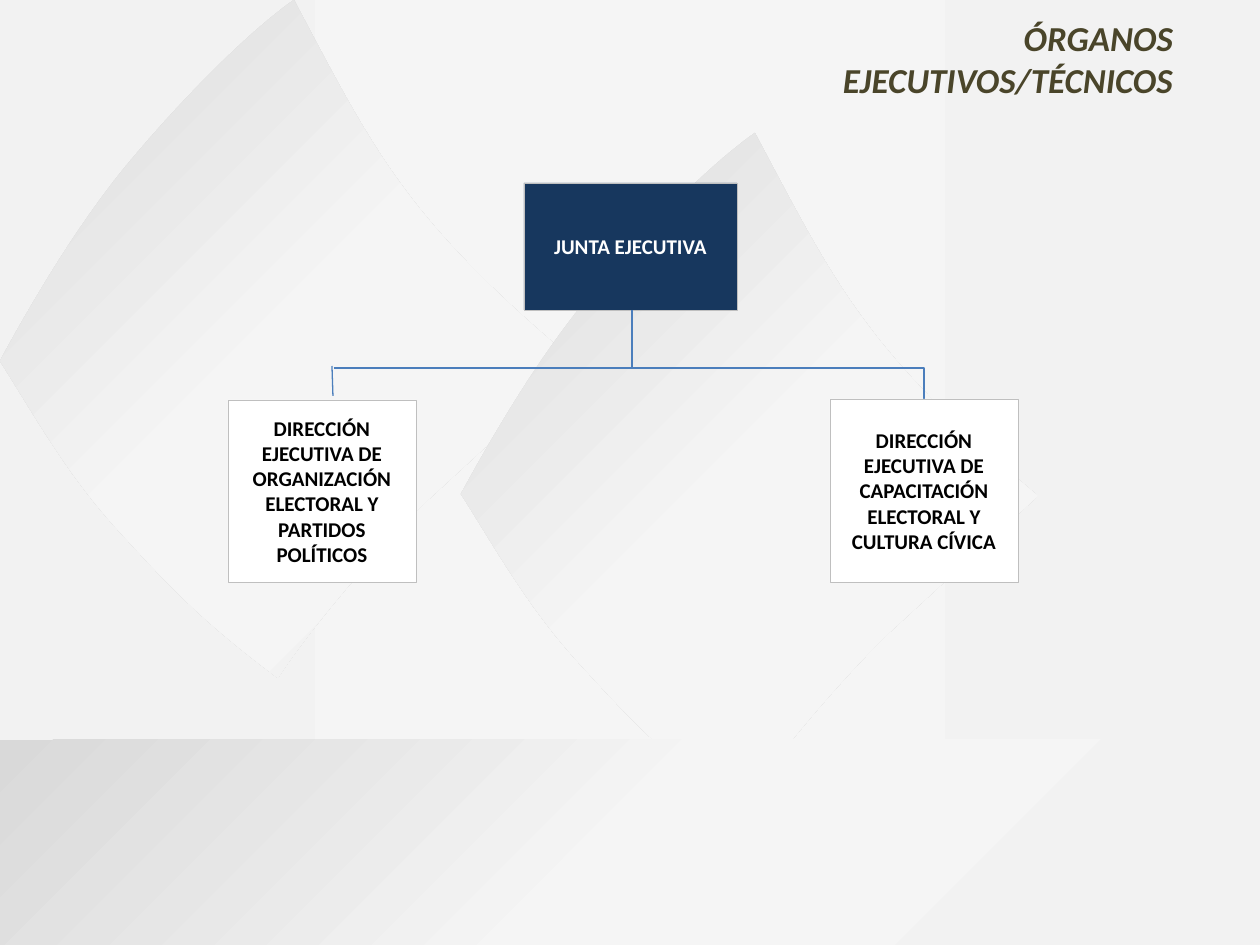
from lxml.etree import SubElement
from pptx import Presentation
from pptx.dml.color import RGBColor
from pptx.enum.shapes import MSO_CONNECTOR as Link, MSO_SHAPE as Preset
from pptx.enum.text import MSO_ANCHOR as Anchor, MSO_AUTO_SIZE as AutoSize, PP_ALIGN as Align
from pptx.oxml import parse_xml
from pptx.oxml.ns import nsdecls, qn
from pptx.util import Emu, Pt

PX_PER_INCH = 126
SLIDE_W, SLIDE_H = 1260, 945
FONT = "Calibri"
COLORS = {
    "shade": "D9D9D9", "mist": "F5F5F5", "edge": "F2F2F2",
    "navy": "17375E", "white": "FFFFFF", "black": "000000",
    "border": "BFBFBF", "link": "4B7EBC", "olive": "4A452A",
}
KITE_START = (0, 361)
KITE_CURVES = [
    [(30, 306), (73, 232), (122, 171)],
    [(171, 111), (244, 35), (294, 0)],
    [(340, 87), (369, 144), (416, 204)],
    [(464, 265), (527, 321), (577, 363)],
    [(528, 408), (478, 454), (428, 500)],
    [(379, 547), (305, 635), (278, 678)],
    [(202, 621), (170, 587), (118, 530)],
    [(67, 474), (38, 421), (0, 361)],
]


def px(length):
    return Emu(round(length * 914400 / PX_PER_INCH))


def color(name):
    return RGBColor.from_string(COLORS[name])


def set_gradient(shape, stops, angle):
    shape.shadow.inherit = False
    shape.line.fill.background()
    shape.fill.background()
    stop_xml = "".join(
        f'<a:gs pos="{i * 50000}"><a:srgbClr val="{COLORS[stop]}"/></a:gs>'
        for i, stop in enumerate(stops))
    gradient = parse_xml(
        f'<a:gradFill {nsdecls("a")} rotWithShape="1"><a:gsLst>{stop_xml}</a:gsLst>'
        f'<a:lin ang="{angle * 60000}" scaled="0"/></a:gradFill>')
    properties = shape.element.spPr
    properties.replace(properties.find(qn("a:noFill")), gradient)


def add_band(slide, box, stops, angle):
    band = slide.shapes.add_shape(Preset.RECTANGLE, *map(px, box))
    set_gradient(band, stops, angle)


def add_kite(slide, left, top):
    builder = slide.shapes.build_freeform(*map(px, KITE_START))
    builder.add_line_segments([tuple(map(px, curve[-1])) for curve in KITE_CURVES], close=True)
    kite = builder.convert_to_shape(px(left), px(top))
    segments = list(kite.element.spPr.iter(qn("a:lnTo")))
    for segment, curve in zip(segments, KITE_CURVES):
        points = "".join(f'<a:pt x="{px(x)}" y="{px(y)}"/>' for x, y in curve)
        bezier = parse_xml(f'<a:cubicBezTo {nsdecls("a")}>{points}</a:cubicBezTo>')
        segment.getparent().replace(segment, bezier)
    set_gradient(kite, ("shade", "mist", "edge"), 45)


def add_backdrop(slide):
    add_band(slide, (0, 0, SLIDE_W, SLIDE_H), ("edge", "mist", "edge"), 180)
    for corner in ((0, 0), (461, 133)):
        add_kite(slide, *corner)
    add_band(slide, (0, 740, SLIDE_W, 207), ("shade", "mist", "edge"), 45)


def format_text(frame, text, size, ink, align):
    frame.text = text
    paragraph = frame.paragraphs[0]
    paragraph.alignment = align
    font = paragraph.font
    font.name, font.size, font.bold = FONT, Pt(size), True
    font.color.rgb = color(ink)
    return font


def add_title(slide, box):
    title = slide.shapes.title
    title.element.getparent().append(title.element)
    title.left, title.top, title.width, title.height = map(px, box)
    frame = title.text_frame
    frame.word_wrap = False
    frame.auto_size = AutoSize.SHAPE_TO_FIT_TEXT
    frame.vertical_anchor = Anchor.TOP
    frame.margin_left, frame.margin_right = px(12), px(18)
    font = format_text(frame, "ÓRGANOS EJECUTIVOS/TÉCNICOS", 20, "olive", Align.RIGHT)
    font.italic = True


def add_office(slide, box, name, fill, ink, inset_x, inset_y):
    office = slide.shapes.add_shape(Preset.RECTANGLE, *map(px, box))
    office.shadow.inherit = False
    office.fill.solid()
    office.fill.fore_color.rgb = color(fill)
    office.line.color.rgb = color("border")
    office.line.width = Pt(0.25)
    frame = office.text_frame
    frame.word_wrap = True
    frame.vertical_anchor = Anchor.MIDDLE
    frame.margin_left = frame.margin_right = px(inset_x)
    frame.margin_top = frame.margin_bottom = px(inset_y)
    format_text(frame, name, 12, ink, Align.CENTER)


def add_link(slide, ends, kind=Link.STRAIGHT):
    link = slide.shapes.add_connector(kind, *map(px, ends))
    link.line.color.rgb = color("link")
    link.line.width = Pt(0.75)
    properties = link.element.spPr
    SubElement(properties, qn("a:effectLst"))
    if kind == Link.ELBOW:
        properties.find(qn("a:prstGeom")).set("prst", "bentConnector2")


def add_org_chart(slide, left, top):
    def at(x, y, *rest):
        return (left + x, top + y, *rest)

    add_office(slide, at(296, 0, 213, 127), "JUNTA EJECUTIVA", "navy", "white", 10, 0)
    add_link(slide, at(106, 185) + at(696, 216), Link.ELBOW)
    add_office(slide, at(602, 216, 188, 183),
               "DIRECCIÓN EJECUTIVA DE CAPACITACIÓN ELECTORAL Y CULTURA CÍVICA",
               "white", "black", 5, 5)
    add_title(slide, (674, 10, 517, 55))
    add_link(slide, at(404, 127) + at(404, 186))
    add_office(slide, at(0, 217, 188, 182),
               "DIRECCIÓN EJECUTIVA DE ORGANIZACIÓN ELECTORAL Y PARTIDOS POLÍTICOS",
               "white", "black", 5, 5)
    add_link(slide, at(104, 183) + at(105, 213))


def main():
    deck = Presentation()
    deck.slide_width, deck.slide_height = px(SLIDE_W), px(SLIDE_H)
    slide = deck.slides.add_slide(deck.slide_layouts.get_by_name("Title Only"))
    add_backdrop(slide)
    add_org_chart(slide, 228, 183)
    deck.save("out.pptx")


if __name__ == "__main__":
    main()
